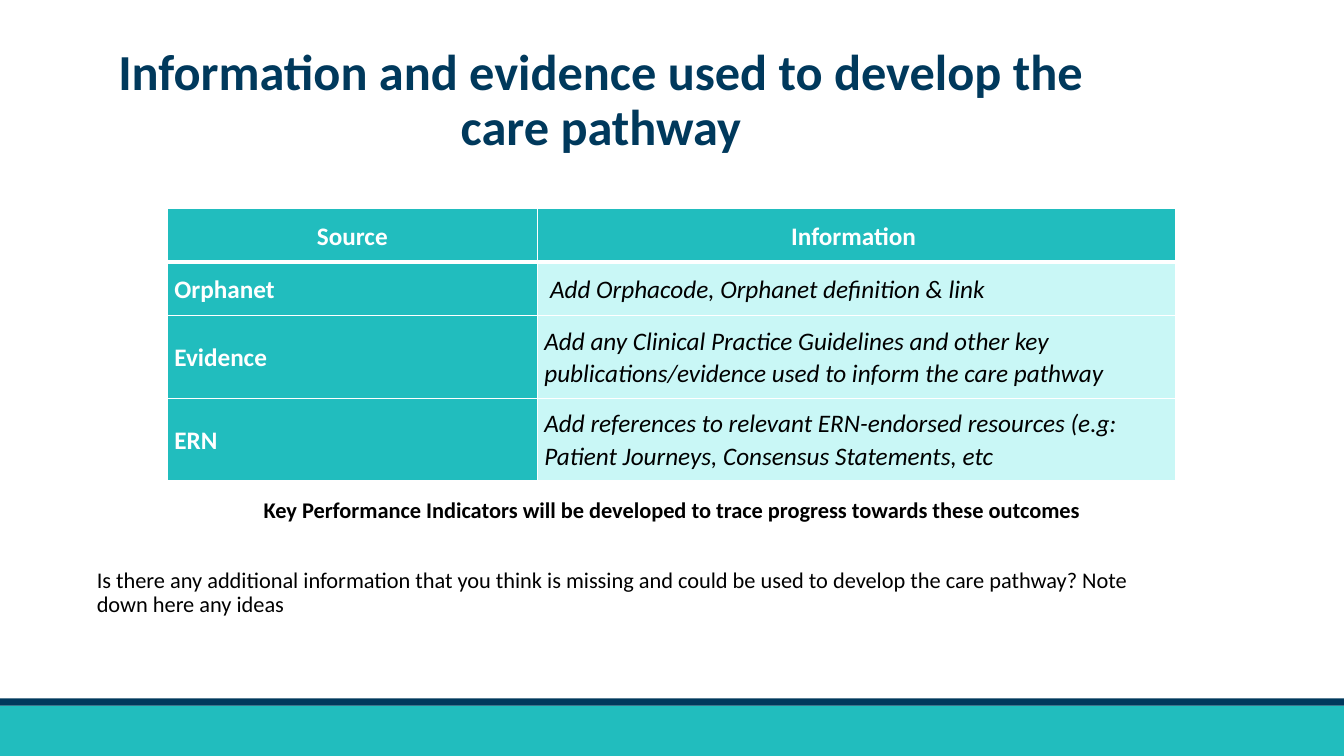
import pptx
import pptx.dml.color
import pptx.enum.shapes
import pptx.enum.text
import pptx.oxml
import pptx.oxml.ns
import pptx.util

Inches = pptx.util.Inches
Pt = pptx.util.Pt
RGBColor = pptx.dml.color.RGBColor
PP_ALIGN = pptx.enum.text.PP_ALIGN
MSO_ANCHOR = pptx.enum.text.MSO_ANCHOR

TEAL = RGBColor(0x21, 0xBD, 0xBE)
PALE_TEAL = RGBColor(0xC9, 0xF7, 0xF6)
NAVY = RGBColor(0x00, 0x39, 0x5C)
BLACK = RGBColor(0, 0, 0)
WHITE = RGBColor(0xFF, 0xFF, 0xFF)

SOURCES = [
    ("Source", "Information "),
    ("Orphanet", " Add Orphacode, Orphanet definition & link"),
    ("Evidence", "Add any Clinical Practice Guidelines and other key "
                 "publications/evidence used to inform the care pathway"),
    ("ERN", "Add references to relevant ERN-endorsed resources "
            "(e.g: Patient Journeys, Consensus Statements, etc"),
]
COLUMN_WIDTHS = [3.67, 6.33]
ROW_HEIGHTS = [0.53, 0.53, 0.82, 0.82]


def write(tf, text, size, color, bold=False, italic=False,
          align=PP_ALIGN.LEFT, spacing=0.9, after=0):
    tf.text = text
    p = tf.paragraphs[0]
    p.alignment = align
    p.line_spacing = spacing
    p.space_after = Pt(after)
    font = p.runs[0].font
    font.name = "Calibri"
    font.size = Pt(size)
    font.bold = bold
    font.italic = italic
    font.color.rgb = color


def add_bar(s, top, height, color):
    bar = s.shapes.add_shape(pptx.enum.shapes.MSO_SHAPE.RECTANGLE, 0,
                             Inches(top), Inches(13.33), Inches(height))
    bar.shadow.inherit = False
    bar.fill.solid()
    bar.fill.fore_color.rgb = color
    bar.line.fill.background()


def add_text(s, box, text, size, color, margin=None,
             anchor=MSO_ANCHOR.TOP, **style):
    tf = s.shapes.add_textbox(*map(Inches, box)).text_frame
    tf.word_wrap = True
    tf.vertical_anchor = anchor
    if margin is not None:
        tf.margin_left = tf.margin_right = Inches(margin)
        tf.margin_top = tf.margin_bottom = Inches(margin)
    write(tf, text, size, color, **style)


def add_border(cell, side, width):
    cell._tc.get_or_add_tcPr().append(pptx.oxml.parse_xml(
        f'<a:ln{side} {pptx.oxml.ns.nsdecls("a")} w="{Pt(width)}">'
        f'<a:solidFill><a:srgbClr val="{WHITE}"/></a:solidFill></a:ln{side}>'))


def style_cell(cell, text, row, col):
    header = row == 0
    label = header or col == 0
    cell.margin_left = cell.margin_right = Inches(0.07)
    cell.margin_top = cell.margin_bottom = 0
    cell.vertical_anchor = MSO_ANCHOR.MIDDLE
    for side, width in (("L", 1), ("R", 1), ("T", 3 if row == 1 else 1),
                        ("B", 3 if header else 1)):
        add_border(cell, side, width)
    cell.fill.solid()
    cell.fill.fore_color.rgb = TEAL if label else PALE_TEAL
    write(cell.text_frame, text, 18, WHITE if label else BLACK,
          bold=label, italic=not label,
          align=PP_ALIGN.CENTER if header else PP_ALIGN.LEFT,
          spacing=1.07, after=0 if label else 8)


def add_source_table(s):
    table = s.shapes.add_table(
        len(SOURCES), len(COLUMN_WIDTHS), Inches(1.66), Inches(2.07),
        Inches(sum(COLUMN_WIDTHS)), Inches(sum(ROW_HEIGHTS))).table
    for column, width in zip(table.columns, COLUMN_WIDTHS):
        column.width = Inches(width)
    for row, (height, texts) in enumerate(zip(ROW_HEIGHTS, SOURCES)):
        table.rows[row].height = Inches(height)
        for col, text in enumerate(texts):
            style_cell(table.cell(row, col), text, row, col)


def main():
    prs = pptx.Presentation()
    prs.slide_width = Inches(13.33)
    prs.slide_height = Inches(7.5)
    s = prs.slides.add_slide(prs.slide_layouts[6])
    add_bar(s, 7, 0.5, TEAL)
    add_bar(s, 6.93, 0.07, NAVY)
    add_text(s, (0.96, 0.62, 10, 0.78),
             "Information and evidence used to develop the care pathway",
             36, NAVY, margin=0, anchor=MSO_ANCHOR.MIDDLE, bold=True,
             align=PP_ALIGN.CENTER)
    add_text(s, (2.14, 4.78, 9.05, 0.59),
             "Key Performance Indicators will be developed to trace progress "
             "towards these outcomes",
             16, BLACK, anchor=MSO_ANCHOR.MIDDLE, bold=True,
             align=PP_ALIGN.CENTER, after=6)
    add_source_table(s)
    add_text(s, (0.96, 5.65, 10.41, 0.56),
             "Is there any additional information that you think is missing "
             "and could be used to develop the care pathway? Note down here "
             "any ideas", 16, BLACK, margin=0, after=6)
    prs.save("out.pptx")


if __name__ == "__main__":
    main()
